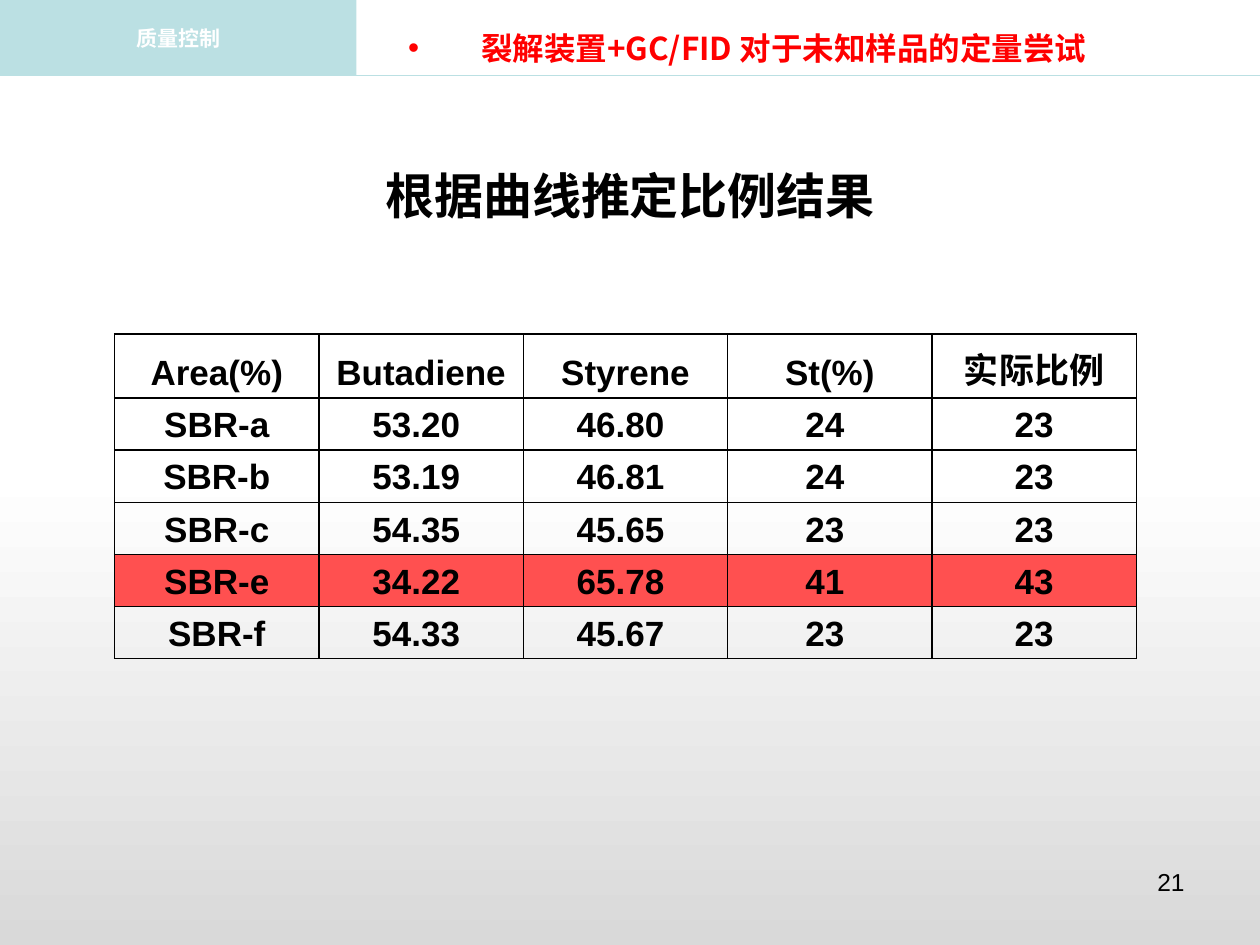
from lxml import etree
from pptx import Presentation
from pptx.dml.color import RGBColor
from pptx.enum.shapes import MSO_CONNECTOR, MSO_SHAPE
from pptx.enum.text import MSO_ANCHOR, MSO_AUTO_SIZE, PP_ALIGN
from pptx.oxml.ns import qn
from pptx.util import Inches, Pt

RECTANGLE = MSO_SHAPE.RECTANGLE
STRAIGHT = MSO_CONNECTOR.STRAIGHT
LEFT, CENTER, RIGHT = PP_ALIGN.LEFT, PP_ALIGN.CENTER, PP_ALIGN.RIGHT
TOP, MIDDLE, BOTTOM = MSO_ANCHOR.TOP, MSO_ANCHOR.MIDDLE, MSO_ANCHOR.BOTTOM
TITLE_ONLY = 5

COLORS = {
    "black": "000000",
    "white": "FFFFFF",
    "gray": "D9D9D9",
    "teal": "BBE0E3",
    "red": "FF0000",
    "highlight": "FF5050",
}
LATIN_FONT = "Arial"
CHINESE_FONT = "Noto Sans CJK SC"

TABLE_ROWS = [
    ("Area(%)", "Butadiene", "Styrene", "St(%)", "实际比例"),
    ("SBR-a", "53.20 ", "46.80 ", "24 ", "23"),
    ("SBR-b", "53.19 ", "46.81 ", "24 ", "23"),
    ("SBR-c", "54.35 ", "45.65 ", "23 ", "23"),
    ("SBR-e", "34.22 ", "65.78 ", "41 ", "43"),
    ("SBR-f", "54.33 ", "45.67 ", "23 ", "23"),
]
HIGHLIGHTED_SAMPLE = "SBR-e"


def color(name):
    return RGBColor.from_string(COLORS[name])


def write_text(frame, text, size, color_name="black", font=LATIN_FONT,
               bold=True, align=CENTER, anchor=MIDDLE):
    """Fill a text frame with one formatted paragraph and return it."""
    frame.word_wrap = True
    frame.vertical_anchor = anchor
    paragraph = frame.paragraphs[0]
    paragraph.alignment = align
    run = paragraph.add_run()
    run.text = text
    for name, value in {"size": Pt(size), "bold": bold, "name": font}.items():
        setattr(run.font, name, value)
    run.font.color.rgb = color(color_name)
    east_asian = etree.SubElement(run.font._element, qn("a:ea"))
    east_asian.set("typeface", CHINESE_FONT)
    return paragraph


def add_rectangle(slide, left, top, width, height):
    shape = slide.shapes.add_shape(
        RECTANGLE, Inches(left), Inches(top), Inches(width), Inches(height))
    shape.shadow.inherit = False
    shape.line.fill.background()
    return shape


def add_text(slide, left, top, width, height, text, size, **style):
    box = slide.shapes.add_textbox(
        Inches(left), Inches(top), Inches(width), Inches(height))
    return write_text(box.text_frame, text, size, **style)


def add_background(slide):
    fill = add_rectangle(slide, 0, 0, 10, 7.5).fill
    fill.gradient()
    fill.gradient_angle = 90
    stops = ((0, "gray"), (0.5, "white"))
    for stop, (position, name) in zip(fill.gradient_stops, stops):
        stop.position = position
        stop.color.rgb = color(name)


def add_header(slide):
    # Section tab
    tab = add_rectangle(slide, 0, 0, 2.83, 0.6)
    tab.fill.solid()
    tab.fill.fore_color.rgb = color("teal")
    write_text(tab.text_frame, "质量控制", 12, "white")
    # Rule below the header
    rule = slide.shapes.add_connector(
        STRAIGHT, Inches(0), Inches(0.6), Inches(10), Inches(0.6))
    rule.line.color.rgb = color("teal")
    rule.line.width = Pt(0.75)
    etree.SubElement(rule._element.spPr, qn("a:effectLst"))


def add_topic(slide):
    paragraph = add_text(
        slide, 2.64, 0.08, 7.36, 0.6, "裂解装置+GC/FID 对于未知样品的定量尝试", 18,
        color_name="red", font=CHINESE_FONT, align=LEFT)
    paragraph.level = 1
    paragraph.space_before = Pt(3.6)
    properties = paragraph._p.get_or_add_pPr()
    properties.set("marL", str(Inches(1.08)))
    properties.set("indent", str(Inches(-0.58)))
    etree.SubElement(properties, qn("a:buFont")).set("typeface", LATIN_FONT)
    etree.SubElement(properties, qn("a:buChar")).set("char", "•")


def format_title(slide):
    title = slide.shapes.title
    # Bring the title in front of the background
    slide.shapes._spTree.append(title._element)
    place = {"left": 0, "top": 1.07, "width": 10, "height": 0.95}
    for name, value in place.items():
        setattr(title, name, Inches(value))
    title.text_frame.auto_size = MSO_AUTO_SIZE.NONE
    write_text(title.text_frame, "根据曲线推定比例结果", 28, font=CHINESE_FONT)


def set_borders(cell):
    properties = cell._tc.get_or_add_tcPr()
    for index, side in enumerate(("lnL", "lnR", "lnT", "lnB")):
        line = etree.Element(qn(f"a:{side}"), w=str(Pt(1)))
        fill = etree.SubElement(line, qn("a:solidFill"))
        etree.SubElement(fill, qn("a:srgbClr"), val=COLORS["black"])
        properties.insert(index, line)


def add_results_table(slide):
    header_height, row_height = 0.51, 0.41
    height = header_height + row_height * (len(TABLE_ROWS) - 1)
    table = slide.shapes.add_table(
        len(TABLE_ROWS), len(TABLE_ROWS[0]),
        Inches(0.91), Inches(2.65), Inches(8.11), Inches(height)).table
    table.first_row = table.horz_banding = False
    for row_index, values in enumerate(TABLE_ROWS):
        table.rows[row_index].height = Inches(
            row_height if row_index else header_height)
        for column_index, value in enumerate(values):
            cell = table.cell(row_index, column_index)
            write_text(cell.text_frame, value, 20)
            cell.vertical_anchor = BOTTOM
            cell.margin_top = cell.margin_bottom = Inches(0.04)
            if values[0] == HIGHLIGHTED_SAMPLE:
                cell.fill.solid()
                cell.fill.fore_color.rgb = color("highlight")
            else:
                cell.fill.background()
            set_borders(cell)


def main():
    presentation = Presentation()
    presentation.slide_width = Inches(10)
    presentation.slide_height = Inches(7.5)
    slide = presentation.slides.add_slide(presentation.slide_layouts[TITLE_ONLY])
    add_background(slide)
    add_header(slide)
    # Page number
    add_text(slide, 7.17, 6.83, 2.33, 0.52, "21", 14,
             bold=False, align=RIGHT, anchor=TOP)
    add_results_table(slide)
    format_title(slide)
    add_topic(slide)
    presentation.save("out.pptx")


if __name__ == "__main__":
    main()
